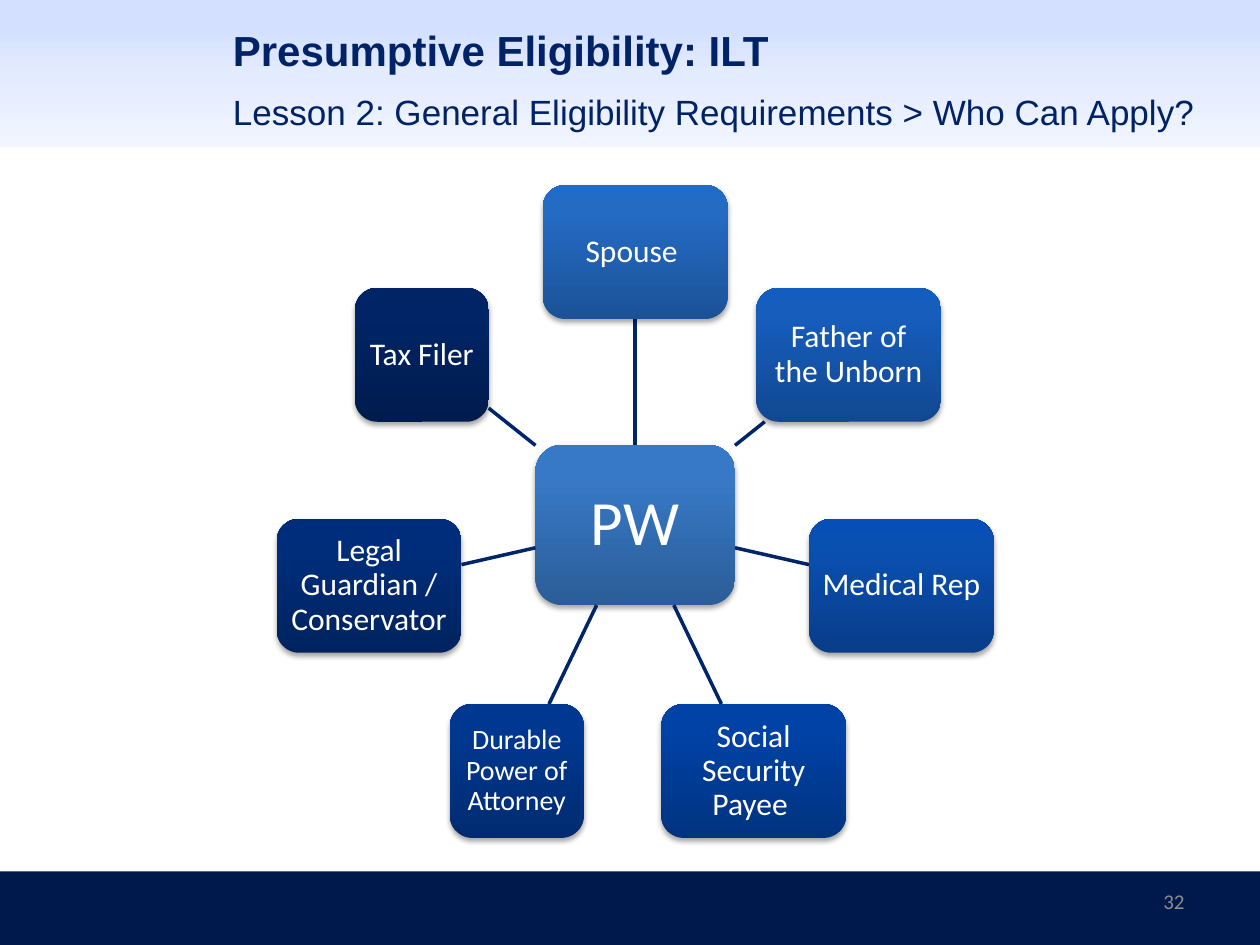
from math import cos, pi, sin

from lxml import etree
from pptx import Presentation
from pptx.dml.color import RGBColor
from pptx.enum.shapes import MSO_CONNECTOR, MSO_SHAPE
from pptx.enum.text import MSO_ANCHOR, PP_ALIGN
from pptx.oxml import parse_xml
from pptx.oxml.ns import nsdecls, qn
from pptx.util import Pt

COLORS = {
    "navy": "002266",
    "footer": "00194D",
    "spoke": "002569",
    "number": "8C8C8C",
    "white": "FFFFFF",
}
HEADER_STOPS = [(20, "D4E0FF"), (50, "E3EBFF"), (100, "F1F5FF")]

CENTER_X, CENTER_Y = 363, 300
RADIUS = 156
HUB_SIZE = (114, 91.6)
HUB_SHADES = ("2B5D98", "3779C6", "3579C9")
WIDE, NARROW, HEIGHT = 105.6, 76.5, 76.5

# Clockwise from the top: text, width, font size, shades from bottom to top
APPLICANTS = [
    ("Spouse ", WIDE, 18, ("1B5297", "246BC4", "216BC8")),
    ("Father of the Unborn", WIDE, 18, ("114891", "165DBC", "135DC0")),
    ("Medical Rep", WIDE, 18, ("083D89", "0A50B2", "074FB6")),
    ("Social Security Payee ", WIDE, 18, ("003380", "0042A6", "0043A7")),
    ("Durable Power of Attorney", NARROW, 16, ("002B70", "003891", "003892")),
    ("Legal Guardian / Conservator", WIDE, 18, ("00235F", "002D7B", "002E7C")),
    ("Tax Filer", NARROW, 18, ("001C4E", "002466", "002466")),
]


def edge_distance(dx, dy, size):
    """Distance from a box's centre to its edge along the unit vector (dx, dy)."""
    w, h = size
    return min(half / abs(d) for half, d in ((w / 2, dx), (h / 2, dy)) if abs(d) > 1e-6)


class SlideBuilder:
    heading_font = "Arial"
    body_font = "Calibri"

    def __init__(self, slide):
        self.s = slide

    def add_run(self, tf, text, size, color, font, align=PP_ALIGN.LEFT, bold=False):
        tf.word_wrap = True
        p = tf.paragraphs[0]
        p.alignment = align
        r = p.add_run()
        r.text = text
        r.font.name = font
        r.font.size = Pt(size)
        r.font.bold = bold
        r.font.color.rgb = RGBColor.from_string(COLORS[color])
        return p

    def text(self, box, text, size, color, font, anchor=MSO_ANCHOR.MIDDLE, **style):
        tf = self.s.shapes.add_textbox(*map(Pt, box)).text_frame
        tf.vertical_anchor = anchor
        self.add_run(tf, text, size, color, font, **style)

    def shape(self, box, kind=MSO_SHAPE.RECTANGLE):
        sp = self.s.shapes.add_shape(kind, *map(Pt, box))
        sp.shadow.inherit = False
        sp.line.fill.background()
        return sp

    def band(self, box, color):
        sp = self.shape(box)
        sp.fill.solid()
        sp.fill.fore_color.rgb = RGBColor.from_string(COLORS[color])

    def gradient(self, sp, stops, angle):
        """Fill with (percent, hex) stops; the angle runs clockwise in degrees."""
        gs = "".join(
            f'<a:gs pos="{pos * 1000}"><a:srgbClr val="{color}"/></a:gs>' for pos, color in stops
        )
        fill = parse_xml(
            f'<a:gradFill {nsdecls("a")} rotWithShape="1"><a:gsLst>{gs}</a:gsLst>'
            f'<a:lin ang="{angle * 60000}" scaled="0"/></a:gradFill>'
        )
        sp._element.spPr.find(qn("a:prstGeom")).addnext(fill)

    def soft_shadow(self, sp):
        effects = sp._element.spPr.find(qn("a:effectLst"))
        effects.append(parse_xml(
            f'<a:outerShdw {nsdecls("a")} blurRad="{Pt(3.1)}" dist="{Pt(1.8)}" '
            'dir="5400000" rotWithShape="0"><a:srgbClr val="000000">'
            '<a:alpha val="35000"/></a:srgbClr></a:outerShdw>'
        ))

    def node(self, cx, cy, size, text, font_size, shades, inset):
        w, h = size
        sp = self.shape((cx - w / 2, cy - h / 2, w, h), MSO_SHAPE.ROUNDED_RECTANGLE)
        self.gradient(sp, zip((0, 80, 100), shades), 270)
        self.soft_shadow(sp)
        tf = sp.text_frame
        tf.margin_left = tf.margin_right = tf.margin_top = tf.margin_bottom = Pt(inset)
        tf.vertical_anchor = MSO_ANCHOR.MIDDLE
        p = self.add_run(tf, text, font_size, "white", self.body_font, PP_ALIGN.CENTER)
        p.line_spacing = 0.9

    def spoke(self, x1, y1, x2, y2):
        c = self.s.shapes.add_connector(MSO_CONNECTOR.STRAIGHT, *map(Pt, (x1, y1, x2, y2)))
        c.line.color.rgb = RGBColor.from_string(COLORS["spoke"])
        c.line.width = Pt(2)
        etree.SubElement(c._element.spPr, qn("a:effectLst"))


def main():
    prs = Presentation()
    prs.slide_width, prs.slide_height = Pt(720), Pt(540)
    b = SlideBuilder(prs.slides.add_slide(prs.slide_layouts[6]))

    b.band((0, 498, 720, 42), "footer")
    b.gradient(b.shape((0, 0, 720, 84)), HEADER_STOPS, 90)
    b.text((516, 500.4, 168, 28.8), "32", 12, "number", b.body_font, align=PP_ALIGN.RIGHT)
    b.text((126, 6, 558, 45), "Presumptive Eligibility: ILT", 24, "navy",
           b.heading_font, bold=True)
    b.text((126, 48, 594, 36), "Lesson 2: General Eligibility Requirements > Who Can Apply?",
           20, "navy", b.heading_font, anchor=MSO_ANCHOR.TOP)

    b.node(CENTER_X, CENTER_Y, HUB_SIZE, "PW", 36, HUB_SHADES, 7.2)
    for i, (text, width, font_size, shades) in enumerate(APPLICANTS):
        angle = 2 * pi * i / len(APPLICANTS)
        dx, dy = sin(angle), -cos(angle)
        size = (width, HEIGHT)
        start = edge_distance(dx, dy, HUB_SIZE)
        end = RADIUS - edge_distance(dx, dy, size)
        b.spoke(CENTER_X + start * dx, CENTER_Y + start * dy,
                CENTER_X + end * dx, CENTER_Y + end * dy)
        b.node(CENTER_X + RADIUS * dx, CENTER_Y + RADIUS * dy, size,
               text, font_size, shades, 3.6)

    prs.save("out.pptx")


if __name__ == "__main__":
    main()
